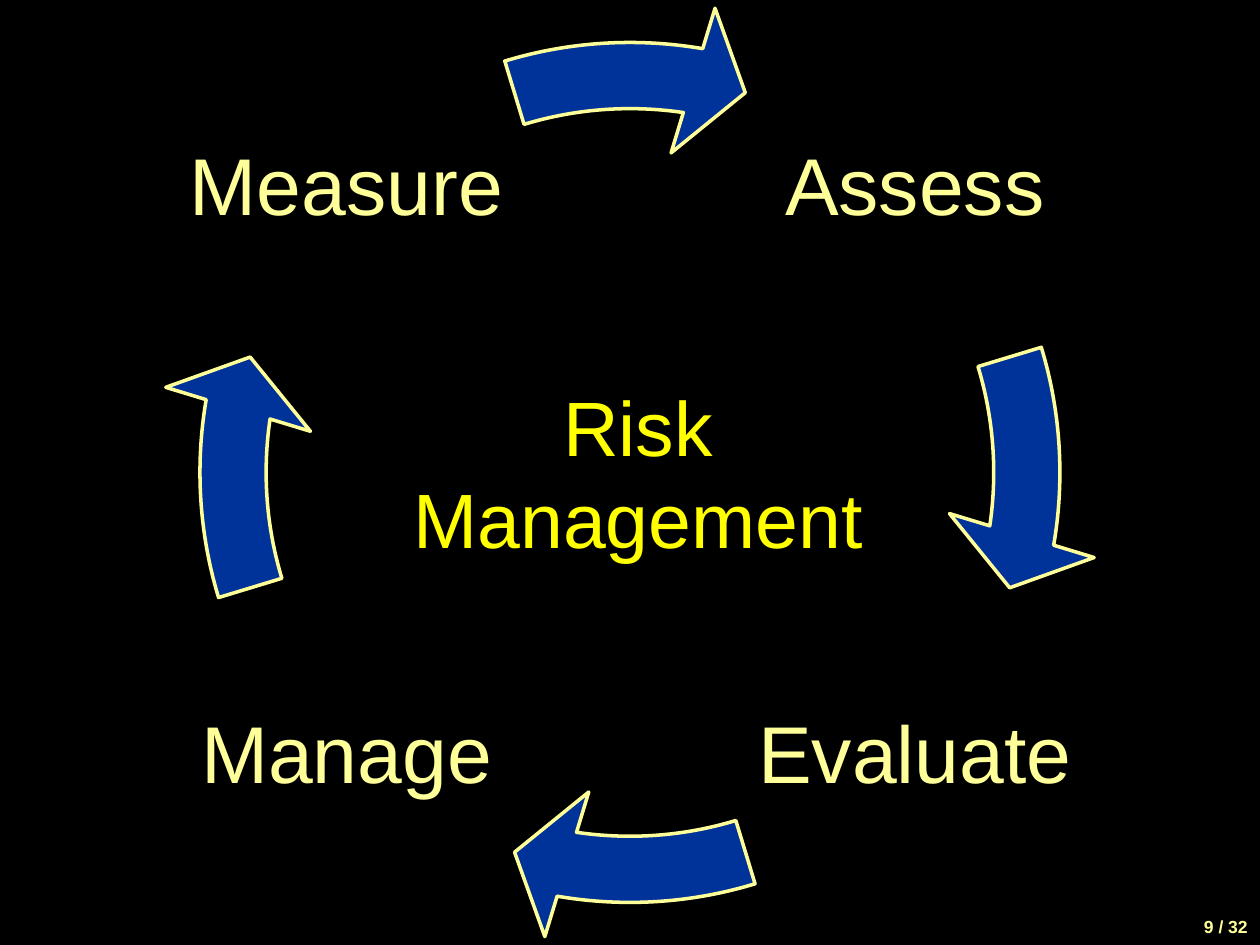
from dataclasses import dataclass
from pptx import Presentation
from pptx import util as u
from pptx.dml.color import RGBColor
from pptx.enum import shapes, text


@dataclass(frozen=True)
class Theme:
    back: RGBColor = RGBColor(0x00, 0x00, 0x00)
    pale: RGBColor = RGBColor(0xFF, 0xFF, 0x99)
    gold: RGBColor = RGBColor(0xFF, 0xFF, 0x00)
    blue: RGBColor = RGBColor(0x00, 0x33, 0x99)
    font: str = "Arial"
    step: int = 46
    title: int = 44
    page: int = 10


@dataclass(frozen=True)
class Step:
    name: str
    left: float
    top: float


THEME = Theme()
LEFT, RIGHT, HIGH, LOW = 1.42, 5.93, 0.17, 4.68
SIDE = 2.66
# Clockwise from the upper right
STEPS = (
    Step("Assess", RIGHT, HIGH),
    Step("Evaluate", RIGHT, LOW),
    Step("Manage", LEFT, LOW),
    Step("Measure", LEFT, HIGH),
)
# Arrow angles, in units of 100000/60000 degree
TURN = 216
QUARTER = TURN / 4
HEAD, TAIL = 5.49, 205.85


def write(frame, words: str, size: int, color: RGBColor, align, bold=False):
    para = frame.paragraphs[0]
    para.alignment = align
    run = para.add_run()
    run.text = words
    font = run.font
    font.name, font.size, font.bold = THEME.font, u.Pt(size), bold
    font.color.rgb = color
    return para


def add_box(slide, left: float, top: float, width: float, height: float):
    box = slide.shapes.add_textbox(
        u.Inches(left), u.Inches(top), u.Inches(width), u.Inches(height))
    box.text_frame.word_wrap = True
    return box.text_frame


def add_step(slide, step: Step) -> None:
    frame = add_box(slide, step.left, step.top, SIDE, SIDE)
    frame.vertical_anchor = text.MSO_ANCHOR.MIDDLE
    frame.margin_left = frame.margin_right = u.Inches(0.06)
    frame.margin_top = frame.margin_bottom = u.Inches(0.06)
    para = write(frame, step.name, THEME.step, THEME.pale, text.PP_ALIGN.CENTER)
    para.line_spacing = 0.9


def add_arrow(slide, turn: int) -> None:
    arrow = slide.shapes.add_shape(
        shapes.MSO_SHAPE.CIRCULAR_ARROW,
        u.Inches(1.25), 0, u.Inches(7.5), u.Inches(7.5))
    shift = turn * QUARTER
    angles = (0.07, 4.65, (HEAD + shift) % TURN, (TAIL + shift) % TURN, 0.08)
    for i, angle in enumerate(angles):
        arrow.adjustments[i] = angle
    arrow.shadow.inherit = False
    arrow.fill.solid()
    arrow.fill.fore_color.rgb = THEME.blue
    arrow.line.color.rgb = THEME.pale
    arrow.line.width = u.Pt(2)


def add_title(slide) -> None:
    title = slide.shapes.title
    title.left, title.top = u.Inches(3.05), u.Inches(3.12)
    title.width, title.height = u.Inches(4.03), u.Inches(1.25)
    frame = title.text_frame
    frame.word_wrap = True
    frame.auto_size = text.MSO_AUTO_SIZE.NONE
    frame.vertical_anchor = text.MSO_ANCHOR.MIDDLE
    write(frame, "Risk Management", THEME.title, THEME.gold, text.PP_ALIGN.CENTER)


def main() -> None:
    deck = Presentation()
    deck.slide_width, deck.slide_height = u.Inches(10), u.Inches(7.5)
    slide = deck.slides.add_slide(deck.slide_layouts[5])
    fill = slide.background.fill
    fill.solid()
    fill.fore_color.rgb = THEME.back

    # Cycle of steps and arrows
    for turn, step in enumerate(STEPS):
        add_step(slide, step)
        add_arrow(slide, turn)

    # Centre title
    add_title(slide)

    # Page count
    frame = add_box(slide, 7.67, 7.22, 2.33, 0.28)
    write(frame, "9 / 32", THEME.page, THEME.pale, text.PP_ALIGN.RIGHT, bold=True)

    deck.save("out.pptx")


if __name__ == "__main__":
    main()
